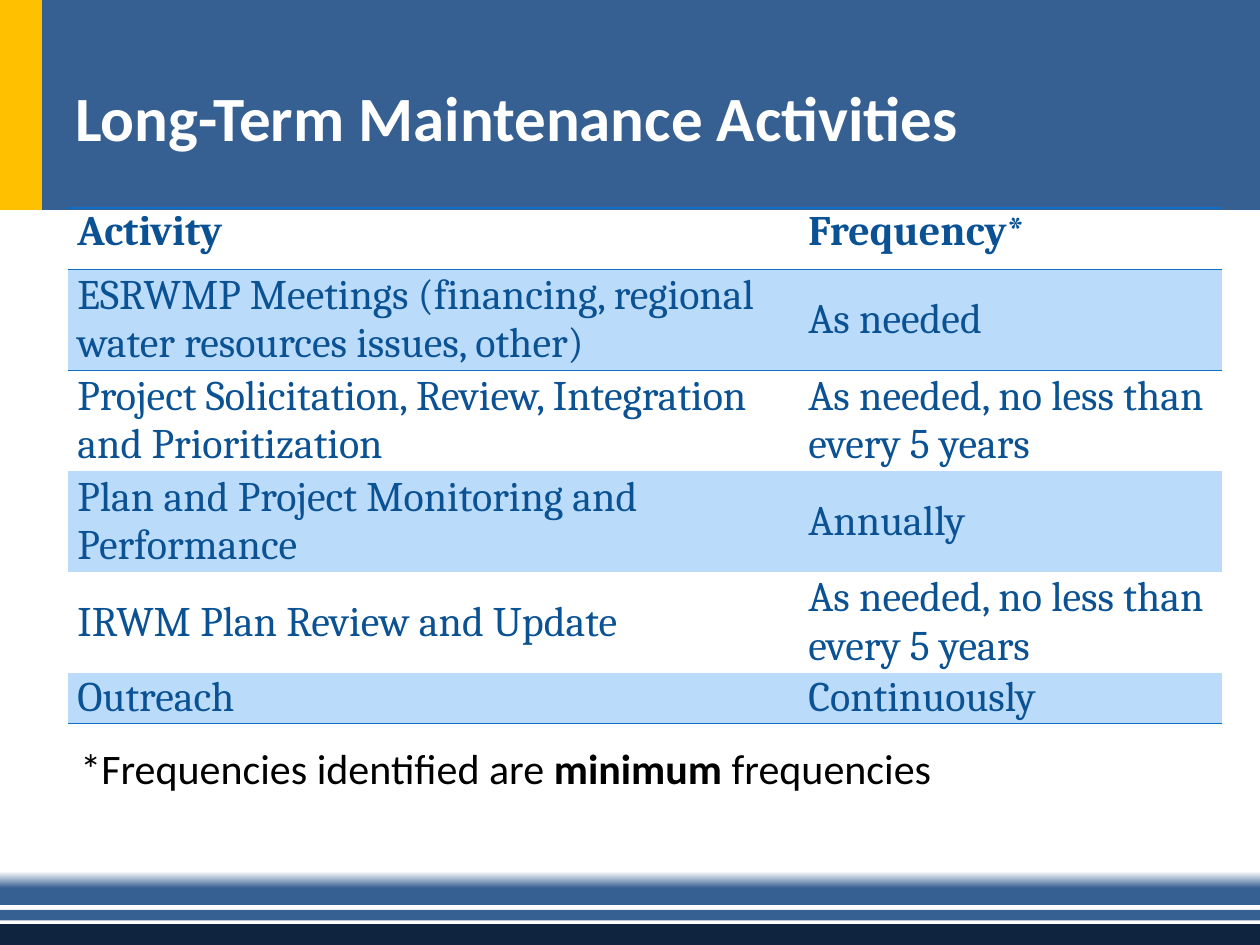
"""Build the long-term maintenance activities slide."""
from pptx import Presentation
from pptx.dml.color import RGBColor
from pptx.enum.shapes import MSO_SHAPE
from pptx.enum.text import MSO_ANCHOR, PP_ALIGN
from pptx.oxml import parse_xml
from pptx.oxml.ns import nsdecls, qn
from pptx.util import Pt

WIDE, HIGH = 720, 540
BLUE, NAVY, GOLD, WHITE = "376092", "0F243E", "FFC000", "FFFFFF"
LINE, BAND = "0F6FC6", "BADBF9"
PLAIN = "{2D5ABB26-0587-4C30-8999-92F81FD0307C}"

BARS = [
    (0, 0, 24, 120, GOLD),
    (24, 0, WIDE - 24, 120, BLUE),
    (0, 528, WIDE, 12, NAVY),
    (0, 520, WIDE, 6, BLUE),
    (0, 498, WIDE, 19, None),
]
TITLE = [("Long-Term Maintenance Activities", True)]
NOTE = [("*Frequencies identified are ", False), ("minimum", True), (" frequencies", False)]
ROWS = [
    ("Activity", "Frequency*"),
    ("ESRWMP Meetings (financing, regional water resources issues, other)", "As needed"),
    ("Project Solicitation, Review, Integration and Prioritization",
     "As needed, no less than every 5 years"),
    ("Plan and Project Monitoring and Performance", "Annually"),
    ("IRWM Plan Review and Update", "As needed, no less than every 5 years"),
    ("Outreach", "Continuously"),
]
COLS = [417.6, 241.9]
TALL = [35.2] + [55.3] * 4 + [28.8]

HEAD = {"name": "Calibri", "size": Pt(36), "color": WHITE}
BODY = {"name": "Calibri", "size": Pt(24), "color": "000000"}
GRID = {"name": "Cambria", "size": Pt(24), "color": "0B5294"}
INSET = {"margin_left": Pt(5.4), "margin_right": Pt(5.4), "margin_top": 0, "margin_bottom": 0}


def tint(part, code):
    part.rgb = RGBColor.from_string(code)


def apply(part, form):
    for key, value in form.items():
        if key == "color":
            tint(part.color, value)
        else:
            setattr(part, key, value)


def write(para, runs, form):
    for text, bold in runs:
        run = para.add_run()
        run.text = text
        apply(run.font, form | {"bold": bold})


def add_bar(slide, left, top, width, height, code):
    bar = slide.shapes.add_shape(MSO_SHAPE.RECTANGLE, Pt(left), Pt(top), Pt(width), Pt(height))
    bar.shadow.inherit = False
    bar.line.fill.background()
    if code:
        bar.fill.solid()
        tint(bar.fill.fore_color, code)
    else:
        bar.fill.gradient()
        bar.fill.gradient_angle = 270
        for stop, shade, place in zip(bar.fill.gradient_stops, (WHITE, BLUE), (0, 0.5)):
            tint(stop.color, shade)
            stop.position = place


def add_text(slide, box, runs, form, anchor):
    frame = slide.shapes.add_textbox(*map(Pt, box)).text_frame
    apply(frame, {"word_wrap": True, "vertical_anchor": anchor})
    write(frame.paragraphs[0], runs, form)


def add_edges(cell, sides):
    props = cell._tc.get_or_add_tcPr()
    for spot, side in enumerate(sides):
        props.insert(spot, parse_xml(
            f'<a:ln{side} {nsdecls("a")} w="12700"><a:solidFill>'
            f'<a:srgbClr val="{LINE}"/></a:solidFill></a:ln{side}>'))


def add_grid(slide):
    table = slide.shapes.add_table(
        len(ROWS), len(COLS), Pt(38.9), Pt(118.8), Pt(sum(COLS)), Pt(sum(TALL))).table
    table._tbl.tblPr.find(qn("a:tableStyleId")).text = PLAIN
    for col, width in zip(table.columns, COLS):
        col.width = Pt(width)
    edges = {0: "TB", 1: "T", len(ROWS) - 1: "B"}
    for i, texts in enumerate(ROWS):
        table.rows[i].height = Pt(TALL[i])
        for j, text in enumerate(texts):
            cell = table.cell(i, j)
            anchor = MSO_ANCHOR.MIDDLE if i else MSO_ANCHOR.TOP
            apply(cell, INSET | {"vertical_anchor": anchor})
            if i % 2:
                cell.fill.solid()
                tint(cell.fill.fore_color, BAND)
            else:
                cell.fill.background()
            add_edges(cell, edges.get(i, ""))
            para = cell.text_frame.paragraphs[0]
            align = PP_ALIGN.LEFT if i else PP_ALIGN.JUSTIFY
            apply(para, {"alignment": align, "space_after": Pt(6)})
            write(para, [(text, i == 0)], GRID)


def main():
    deck = Presentation()
    apply(deck, {"slide_width": Pt(WIDE), "slide_height": Pt(HIGH)})
    slide = deck.slides.add_slide(deck.slide_layouts[6])
    for bar in BARS:
        add_bar(slide, *bar)
    add_text(slide, (36, 21.6, 648, 90), TITLE, HEAD, MSO_ANCHOR.MIDDLE)
    add_grid(slide)
    add_text(slide, (38.9, 420.5, 561, 36), NOTE, BODY, MSO_ANCHOR.TOP)
    deck.save("out.pptx")


if __name__ == "__main__":
    main()
